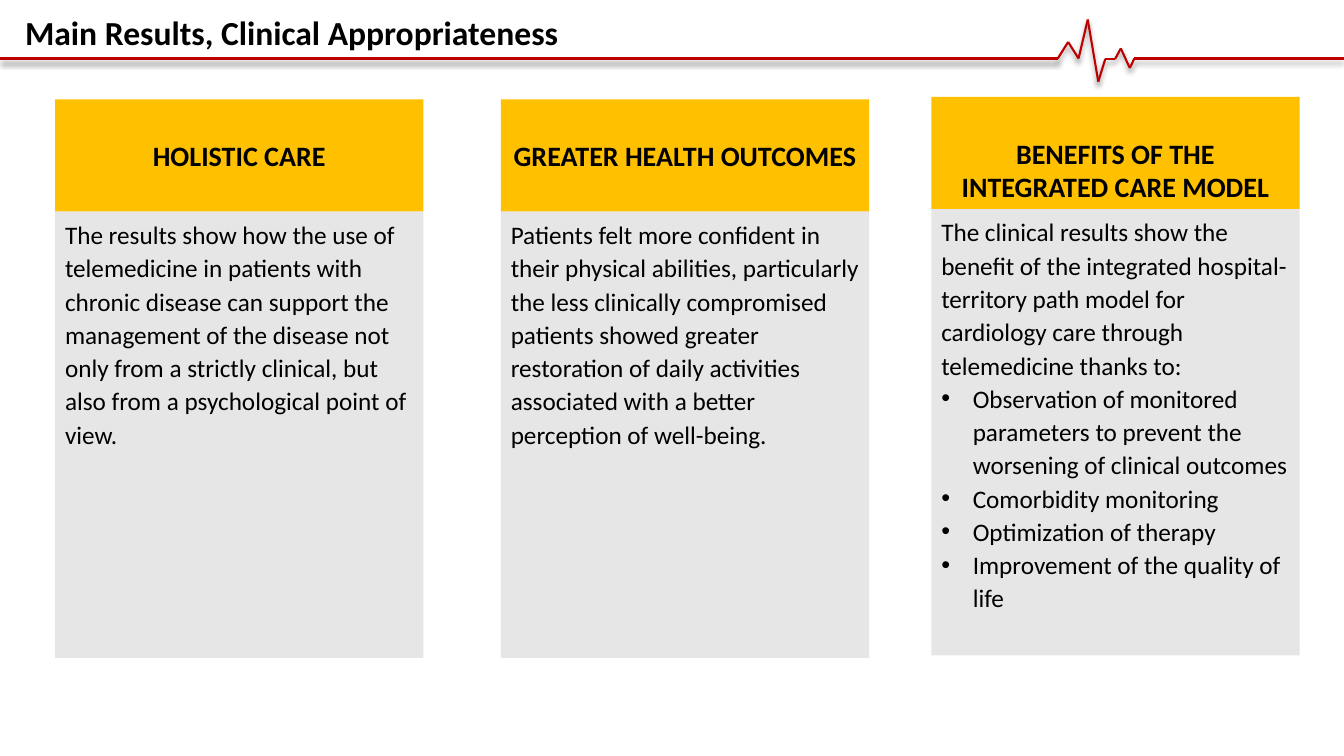
from dataclasses import dataclass
from itertools import pairwise

from lxml import etree
from pptx import Presentation
from pptx.dml.color import RGBColor
from pptx.enum import shapes, text
from pptx.oxml import ns
from pptx.util import Pt

BLACK = RGBColor(0x00, 0x00, 0x00)
RED = RGBColor(0xC0, 0x00, 0x00)
AMBER = RGBColor(0xFF, 0xC0, 0x00)
GREY = RGBColor(0xE7, 0xE6, 0xE6)

FONT = "Calibri"
CARD_WIDTH = 263
HEADING_HEIGHT = 80
BODY_HEIGHT = 319
BULLET_INDENT = 22.5

# Corners of the heartbeat line, in points
HEARTBEAT = [
    (0, 41.8), (755.6, 41.8), (763, 30), (770.4, 41.8), (777, 14),
    (784.5, 58.3), (789.5, 42.2), (796.5, 42.2), (800.6, 34.6),
    (807, 48.6), (810.3, 41.8), (960, 41.8),
]


@dataclass(frozen=True)
class Card:
    left: float
    top: float
    heading: str
    body: str
    bullets: tuple[str, ...] = ()


CARDS = [
    Card(39.4, 71, "HOLISTIC CARE",
         "The results show how the use of telemedicine in patients with chronic "
         "disease can support the management of the disease not only from a "
         "strictly clinical, but also from a psychological point of view."),
    Card(357.8, 71, "GREATER HEALTH OUTCOMES",
         "Patients felt more confident in their physical abilities, particularly "
         "the less clinically compromised patients showed greater restoration of "
         "daily activities associated with a better perception of well-being."),
    Card(665.3, 69.2, "BENEFITS OF THE INTEGRATED CARE MODEL",
         "The clinical results show the benefit of the integrated "
         "hospital-territory path model for cardiology care through "
         "telemedicine thanks to:",
         ("Observation of monitored parameters to prevent the worsening of "
          "clinical outcomes",
          "Comorbidity monitoring",
          "Optimization of therapy",
          "Improvement of the quality of life")),
]


def add_run(paragraph, words: str, size: float, bold: bool = False) -> None:
    run = paragraph.add_run()
    run.text = words
    run.font.name = FONT
    run.font.size = Pt(size)
    run.font.bold = bold
    run.font.color.rgb = BLACK


def add_bullet(paragraph) -> None:
    properties = paragraph._p.get_or_add_pPr()
    properties.set("marL", str(Pt(BULLET_INDENT)))
    properties.set("indent", str(-Pt(BULLET_INDENT)))
    etree.SubElement(properties, ns.qn("a:buFont"), typeface="Arial")
    etree.SubElement(properties, ns.qn("a:buChar"), char="•")


def add_panel(slide, left: float, top: float, height: float, fill: RGBColor):
    """Add a borderless rectangle of card width and return its text frame."""
    panel = slide.shapes.add_shape(shapes.MSO_SHAPE.RECTANGLE, Pt(left), Pt(top),
                                   Pt(CARD_WIDTH), Pt(height))
    panel.shadow.inherit = False
    panel.fill.solid()
    panel.fill.fore_color.rgb = fill
    panel.line.fill.background()
    frame = panel.text_frame
    frame.word_wrap = True
    frame.vertical_anchor = text.MSO_ANCHOR.TOP
    return frame


def add_card(slide, card: Card) -> None:
    body = add_panel(slide, card.left, card.top + HEADING_HEIGHT, BODY_HEIGHT, GREY)
    for index, words in enumerate((card.body, *card.bullets)):
        paragraph = body.add_paragraph() if index else body.paragraphs[0]
        if index:
            add_bullet(paragraph)
        paragraph.alignment = text.PP_ALIGN.LEFT
        paragraph.line_spacing = 1.1
        add_run(paragraph, words, 18)

    heading = add_panel(slide, card.left, card.top, HEADING_HEIGHT, AMBER)
    heading.margin_top = Pt(28)
    heading.paragraphs[0].alignment = text.PP_ALIGN.CENTER
    add_run(heading.paragraphs[0], card.heading, 20, bold=True)


def add_shadow(connector) -> None:
    effects = etree.SubElement(connector._element.spPr, ns.qn("a:effectLst"))
    shadow = etree.SubElement(effects, ns.qn("a:outerShdw"), blurRad=str(Pt(4)),
                              dist=str(Pt(3)), dir="5400000", rotWithShape="0")
    colour = etree.SubElement(shadow, ns.qn("a:srgbClr"), val=str(BLACK))
    etree.SubElement(colour, ns.qn("a:alpha"), val="40000")


def add_heartbeat(slide) -> None:
    for start, end in pairwise(HEARTBEAT):
        stroke = slide.shapes.add_connector(
            shapes.MSO_CONNECTOR.STRAIGHT, *map(Pt, start + end))
        stroke.line.color.rgb = RED
        stroke.line.width = Pt(1.5)
        add_shadow(stroke)


def add_title(slide, words: str) -> None:
    title = slide.shapes.add_textbox(Pt(10.8), Pt(5), Pt(400), Pt(36.5)).text_frame
    title.word_wrap = False
    add_run(title.paragraphs[0], words, 24, bold=True)


def main() -> None:
    deck = Presentation()
    deck.slide_width, deck.slide_height = Pt(960), Pt(540)
    slide = deck.slides.add_slide(deck.slide_layouts[6])
    add_title(slide, "Main Results, Clinical Appropriateness")
    add_heartbeat(slide)
    for card in CARDS:
        add_card(slide, card)
    deck.save("out.pptx")


if __name__ == "__main__":
    main()
